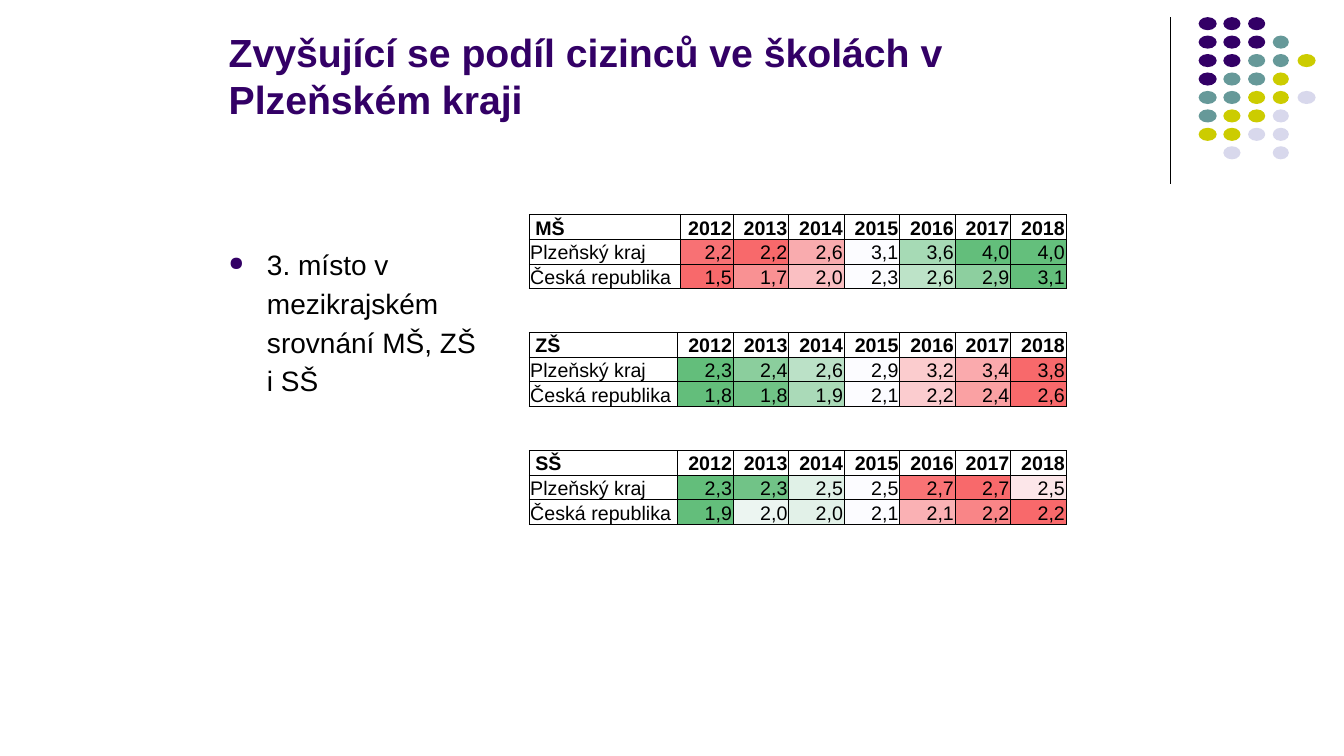
from dataclasses import dataclass

from lxml import etree
from pptx import Presentation
from pptx.dml.color import RGBColor
from pptx.enum.shapes import MSO_CONNECTOR, MSO_SHAPE
from pptx.enum.text import MSO_ANCHOR, PP_ALIGN
from pptx.oxml.ns import qn
from pptx.util import Inches, Pt

LINE, OVAL = MSO_CONNECTOR.STRAIGHT, MSO_SHAPE.OVAL
BOTTOM, TOP = MSO_ANCHOR.BOTTOM, MSO_ANCHOR.TOP
LEFT, RIGHT = PP_ALIGN.LEFT, PP_ALIGN.RIGHT

WIDTH, HEIGHT = Inches(13.33), Inches(7.5)
PURPLE, BLACK = "330066", "000000"

DOT_COLORS = {"P": PURPLE, "T": "669999", "Y": "CCCC00", "L": "D8D8EC"}
DOT_ROWS = ["PPP", "PPPT", "PPTTY", "PTTY", "TTYYL", "TYYL", "YYLL", " L L"]
DOT_WIDTHS = [1.35, 1.28, 1.28, 1.2, 1.35]
DOT_LEFT, DOT_TOP, DOT_STEP_X, DOT_STEP_Y, DOT_HEIGHT = 89.18, 2.27, 1.84, 2.44, 1.73

TABLE_LEFT, TABLE_TOP, TABLE_STEP = 39.38, 28.4, 15.6
ROW_HEIGHT, YEAR_WIDTH = 3.1, 4.13
YEARS = [str(year) for year in range(2012, 2019)]


@dataclass
class Region:
    name: str
    values: str
    fills: str


@dataclass
class ShareTable:
    school: str
    label_width: float
    first_year_width: float
    regions: list[Region]


TABLES = [
    ShareTable("MŠ", 11.25, 3.9, [
        Region("Plzeňský kraj", "2,2 2,2 2,6 3,1 3,6 4,0 4,0",
               "F87174 F8696B F9ABAE FCFCFF A6DAB5 63BE7B 64BF7C"),
        Region("Česká republika", "1,5 1,7 2,0 2,3 2,6 2,9 3,1",
               "F8696B F99193 FABFC2 FCFCFF BDE3C8 8DCF9F 63BE7B"),
    ]),
    ShareTable("ZŠ", 11.03, YEAR_WIDTH, [
        Region("Plzeňský kraj", "2,3 2,4 2,6 2,9 3,2 3,4 3,8",
               "63BE7B 8BCE9D BBE1C7 FCFCFF FBCCCE FAAAAD F8696B"),
        Region("Česká republika", "1,8 1,8 1,9 2,1 2,2 2,4 2,6",
               "63BE7B 70C386 AADAB8 FCFCFF FBCCCF FAA1A3 F8696B"),
    ]),
    ShareTable("SŠ", 11.03, YEAR_WIDTH, [
        Region("Plzeňský kraj", "2,3 2,3 2,5 2,5 2,7 2,7 2,5",
               "63BE7B 71C387 E0F1E7 FCFCFF F97375 F8696B FCE6E9"),
        Region("Česká republika", "1,9 2,0 2,0 2,1 2,1 2,2 2,2",
               "63BE7B ECF5F1 E2F1E8 FCFCFF FAB1B4 F98587 F8696B"),
    ]),
]


def x(percent: float) -> int:
    return round(WIDTH * percent / 100)


def y(percent: float) -> int:
    return round(HEIGHT * percent / 100)


def color(value: str) -> RGBColor:
    return RGBColor.from_string(value)


def apply(target, values: dict) -> None:
    for name, value in values.items():
        setattr(target, name, value)


def write(tf, text: str, size: int, hue: str, bold: bool, paragraph: dict):
    p = tf.paragraphs[0]
    apply(p, paragraph)
    r = p.add_run()
    r.text = text
    apply(r.font, {"name": "Arial", "size": Pt(size), "bold": bold})
    r.font.color.rgb = color(hue)
    return p


def add_text(s, box: tuple, anchor, text: str, size: int, hue: str, bold: bool, paragraph: dict):
    left, top, width, height = box
    tf = s.shapes.add_textbox(x(left), y(top), x(width), y(height)).text_frame
    apply(tf, {"word_wrap": True, "vertical_anchor": anchor})
    return write(tf, text, size, hue, bold, paragraph)


def add_bullet(p, char: str, hue: str, percent: int) -> None:
    pPr = p._p.get_or_add_pPr()
    indent = Inches(0.38)
    pPr.set("marL", str(indent))
    pPr.set("indent", str(-indent))
    tint = etree.SubElement(pPr, qn("a:buClr"))
    etree.SubElement(tint, qn("a:srgbClr"), val=hue)
    etree.SubElement(pPr, qn("a:buSzPct"), val=str(percent * 1000))
    etree.SubElement(pPr, qn("a:buChar"), char=char)


def add_divider(s) -> None:
    line = s.shapes.add_connector(LINE, x(87.08), y(2.27), x(87.08), y(24.4))
    line.line.color.rgb = color(BLACK)
    line.line.width = Pt(0.75)
    etree.SubElement(line._element.spPr, qn("a:effectLst"))


def add_dots(s) -> None:
    group = s.shapes.add_group_shape()
    for row, marks in enumerate(DOT_ROWS):
        for col, mark in enumerate(marks):
            if mark not in DOT_COLORS:
                continue
            dot = group.shapes.add_shape(
                OVAL, x(DOT_LEFT + col * DOT_STEP_X), y(DOT_TOP + row * DOT_STEP_Y),
                x(DOT_WIDTHS[col]), y(DOT_HEIGHT))
            dot.shadow.inherit = False
            dot.fill.solid()
            dot.fill.fore_color.rgb = color(DOT_COLORS[mark])
            dot.line.fill.background()


def add_borders(cell) -> None:
    tcPr = cell._tc.get_or_add_tcPr()
    for side in ("a:lnL", "a:lnR", "a:lnT", "a:lnB"):
        ln = etree.SubElement(tcPr, qn(side), w=str(Pt(0.5)))
        fill = etree.SubElement(ln, qn("a:solidFill"))
        etree.SubElement(fill, qn("a:srgbClr"), val=BLACK)


def fill_cell(cell, text: str, bold: bool, align, left: float, hue: str) -> None:
    apply(cell, {"margin_left": Inches(left), "margin_right": Inches(0.01),
                 "margin_top": Inches(0.01), "margin_bottom": 0,
                 "vertical_anchor": BOTTOM})
    add_borders(cell)
    if hue:
        cell.fill.solid()
        cell.fill.fore_color.rgb = color(hue)
    else:
        cell.fill.background()
    write(cell.text_frame, text, 14, BLACK, bold, {"alignment": align})


def add_share_table(s, item: ShareTable, top: float) -> None:
    widths = [item.label_width, item.first_year_width] + [YEAR_WIDTH] * (len(YEARS) - 1)
    rows = [(item.school, YEARS, [""] * len(YEARS))]
    rows += [(region.name, region.values.split(), region.fills.split()) for region in item.regions]
    table = s.shapes.add_table(
        len(rows), len(widths), x(TABLE_LEFT), y(top),
        x(sum(widths)), y(ROW_HEIGHT * len(rows))).table
    apply(table, {"first_row": False, "horz_banding": False})
    for column, width in zip(table.columns, widths):
        column.width = x(width)
    for i, (label, values, fills) in enumerate(rows):
        header = i == 0
        table.rows[i].height = y(ROW_HEIGHT)
        fill_cell(table.cell(i, 0), label, header, LEFT, 0.06 if header else 0.01, "")
        for j, (value, hue) in enumerate(zip(values, fills), 1):
            fill_cell(table.cell(i, j), value, header, RIGHT, 0.01, hue)


def main() -> None:
    prs = Presentation()
    apply(prs, {"slide_width": WIDTH, "slide_height": HEIGHT})
    s = prs.slides.add_slide(prs.slide_layouts[6])
    add_divider(s)
    add_dots(s)
    add_text(s, (16.28, 0, 58.5, 16.8), BOTTOM,
             "Zvyšující se podíl cizinců ve školách v Plzeňském kraji",
             28, PURPLE, True, {"alignment": LEFT})
    for i, item in enumerate(TABLES):
        add_share_table(s, item, TABLE_TOP + i * TABLE_STEP)
    p = add_text(s, (16.28, 31.47, 20.25, 25.2), TOP,
                 "3. místo v mezikrajském srovnání MŠ, ZŠ i SŠ",
                 20, BLACK, False, {"line_spacing": 1.15, "space_before": Pt(7.5)})
    add_bullet(p, "●", PURPLE, 70)
    prs.save("out.pptx")


if __name__ == "__main__":
    main()
